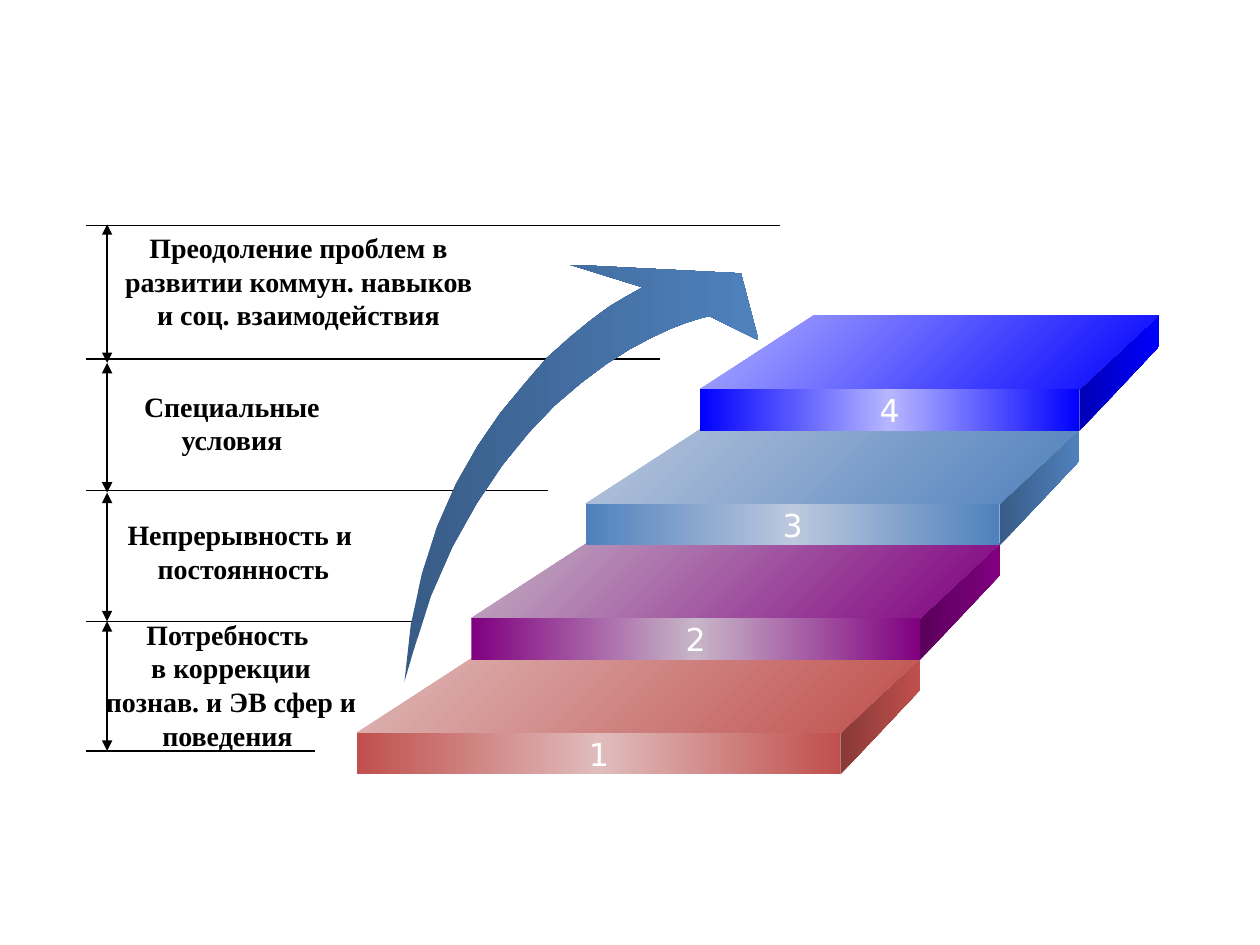
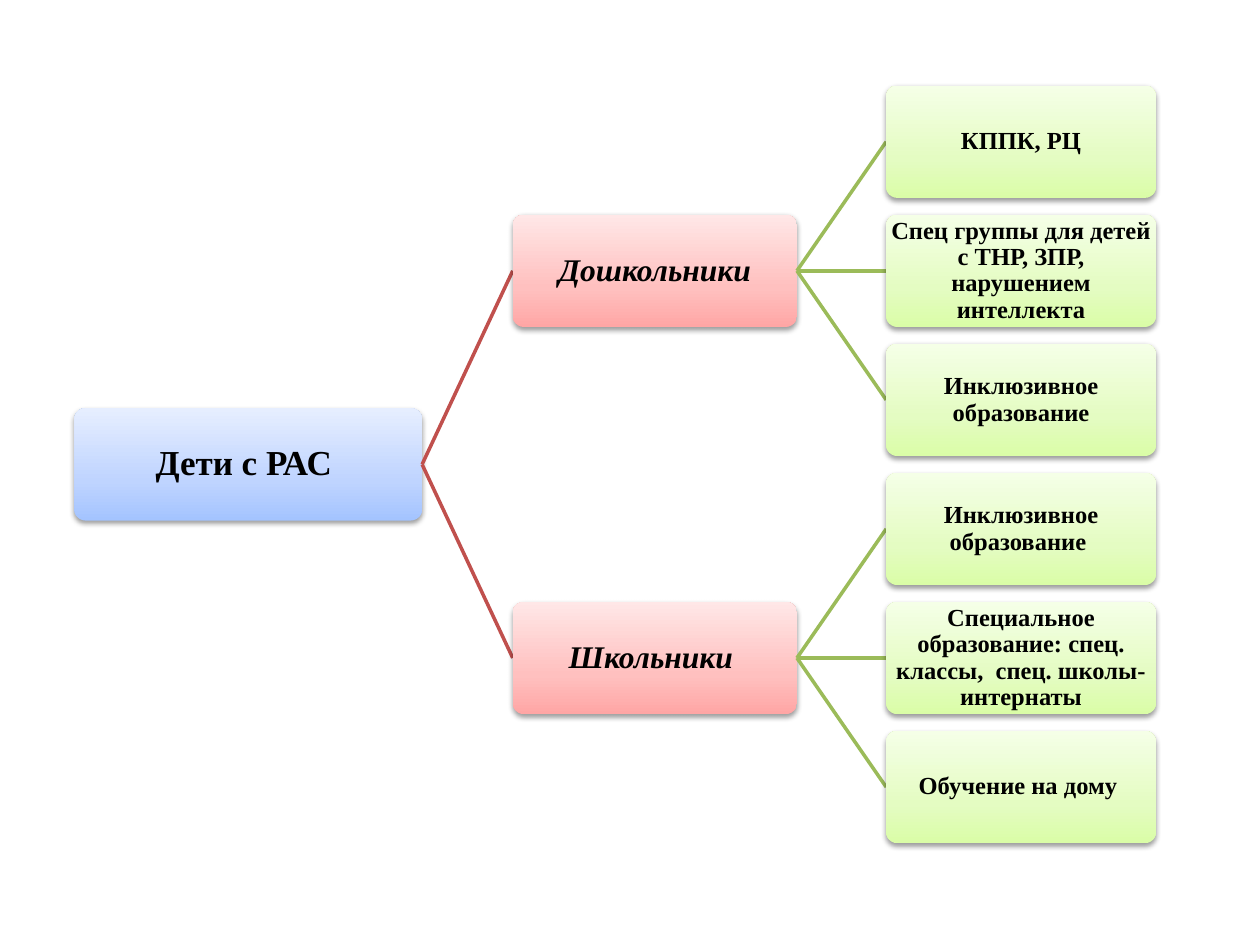
"""Builds two slides: the staircase of support and the tree of education paths."""
from copy import deepcopy
from dataclasses import dataclass
from typing import NamedTuple

from lxml import etree
from pptx import Presentation
from pptx import util as u
from pptx.dml import color as dml_color
from pptx.enum import shapes, text
from pptx.oxml import ns

SERIF, SANS = "Times New Roman", "DejaVu Sans"
BLACK, WHITE, RED, BLUE, GREEN = "000000", "FFFFFF", "C0504D", "4F81BD", "9BBB59"


class Point(NamedTuple):
    x: float
    y: float


class Box(NamedTuple):
    left: float
    top: float
    width: float
    height: float


class Stop(NamedTuple):
    position: float
    hex_color: str
    tone: str = ""
    amount: int = 0


@dataclass
class Level:
    lines: list[str]
    caption: Box
    wrap: bool
    rule_y: float
    rule_end: float
    arrow_top: float


@dataclass
class Tier:
    left: float
    width: float
    size: float
    italic: bool
    stops: list[Stop]


@dataclass
class Branch:
    label: str
    row: int
    paths: list[str]


FLOOR_Y, FLOOR_END = 429.1, 180
LEVELS = [
    Level(["Преодоление проблем в развитии коммун. навыков и соц. взаимодействия"],
          Box(62.6, 128.2, 216, 65.5), True, 128.9, 445.7, 128.2),
    Level(["Специальные", " условия "], Box(74.2, 218.9, 116.6, 46), False, 205.2, 377.3, 207.4),
    Level(["Непрерывность и", " постоянность"],
          Box(62.6, 292.3, 149, 46), False, 280.1, 313.2, 281.5),
    Level(["Потребность", " в коррекции", " познав. и ЭВ сфер и поведения"],
          Box(31, 349.2, 198, 85), True, 355, 241.2, 355),
]
STEP_COLORS = [RED, "800080", BLUE, "0000FF"]
RISE_ARROW = [
    (231.1, 389.5), (234.7, 357.1), (241.2, 327.6), (249.8, 301), (260.6, 276.5),
    (272.9, 254.9), (285.8, 236.2), (299.5, 219.6), (312.5, 204.5), (325.4, 193),
    (337.7, 182.9), (348.5, 175), (357.1, 169.9), (367.2, 164.2), (325.4, 151.2),
    (423.4, 156.2), (433.4, 194.4), (405.4, 180.7), (401.8, 181.4), (392.4, 184.3),
    (383, 187.9), (372.2, 193), (360, 199.4), (346.3, 208.1), (331.9, 218.9),
    (316.8, 231.8), (301.7, 247.7), (286.6, 266.4), (272.2, 288), (258.5, 312.5),
    (246.2, 340.6), (236.2, 372.2),
]

ROW_TOP, ROW_STEP, CARD_HEIGHT = 48.9, 73.75, 64.2
ROOT = Tier(42.5, 198.7, 20, False,
            [Stop(0, "A4C4FF"), Stop(0.35, "BFD4FF"), Stop(1, "E6EEFF")])
AGE = Tier(293, 162.4, 18, True,
           [Stop(0, "FFA6A5"), Stop(0.35, "FFC0BF"), Stop(1, "FFE7E7")])
PATH = Tier(506.4, 154.2, 14, False,
            [Stop(0, "DAFDA7"), Stop(0.35, "E4FCC2"), Stop(1, "F5FFE7")])
BRANCHES = [
    Branch("Дошкольники", 1, ["КППК, РЦ",
                              "Спец группы для детей с ТНР, ЗПР, нарушением интеллекта",
                              "Инклюзивное образование"]),
    Branch("Школьники ", 4, ["Инклюзивное образование ",
                             "Специальное образование: спец. классы,  спец. школы-интернаты",
                             "Обучение на дому "]),
]


def set_color(target, hex_color: str) -> None:
    target.rgb = dml_color.RGBColor.from_string(hex_color)


def add_child(parent, tag: str, **attributes):
    return etree.SubElement(parent, ns.qn(tag), {k: str(v) for k, v in attributes.items()})


def fill_gradient(shape, stops: list[Stop], angle: float) -> None:
    shape.shadow.inherit = False
    shape.line.fill.background()
    shape.fill.gradient()
    shape.fill.gradient_angle = angle
    stop_list = shape._element.spPr.find(ns.qn("a:gradFill")).find(ns.qn("a:gsLst"))
    while len(stop_list) < len(stops):
        stop_list.append(deepcopy(stop_list[0]))
    for drawn, stop, node in zip(shape.fill.gradient_stops, stops, stop_list):
        drawn.position = stop.position
        set_color(drawn.color, stop.hex_color)
        if stop.tone:
            add_child(node[0], f"a:{stop.tone}", val=stop.amount)


def write(shape, lines: list[str], size: float, font_name: str, hex_color: str,
          bold: bool = False, italic: bool = False, spacing: float | None = None) -> None:
    frame = shape.text_frame
    frame.text = "\n".join(lines)
    for paragraph in frame.paragraphs:
        paragraph.alignment = text.PP_ALIGN.CENTER
        paragraph.line_spacing = spacing
        font = paragraph.font
        font.size, font.name, font.bold, font.italic = u.Pt(size), font_name, bold, italic
        set_color(font.color, hex_color)


def add_line(slide, start: Point, end: Point, hex_color: str, width: float,
             arrows: bool = False) -> None:
    line = slide.shapes.add_connector(shapes.MSO_CONNECTOR.STRAIGHT,
                                      *(u.Pt(value) for value in (*start, *end)))
    set_color(line.line.color, hex_color)
    line.line.width = u.Pt(width)
    if arrows:
        outline = line.line._get_or_add_ln()
        add_child(outline, "a:headEnd", type="triangle")
        add_child(outline, "a:tailEnd", type="triangle")
    add_child(line._element.spPr, "a:effectLst")


def add_outline(slide, points: list[tuple[float, float]], stops: list[Stop],
                angle: float) -> None:
    start, *rest = [(u.Pt(x), u.Pt(y)) for x, y in points]
    builder = slide.shapes.build_freeform(*start)
    builder.add_line_segments(rest, close=True)
    fill_gradient(builder.convert_to_shape(), stops, angle)


def add_preset(slide, preset, box: Box):
    return slide.shapes.add_shape(preset, *(u.Pt(value) for value in box))


def shaded(hex_color: str) -> list[Stop]:
    return [Stop(0, hex_color, "shade", 46275), Stop(1, hex_color)]


def add_step(slide, index: int, hex_color: str) -> None:
    left, right, top = 204 + 65.3 * index, 480.3 + 45.5 * index, 418.7 - 65.4 * index
    back_right, back_top, height = right + 45.4, top - 42.5, 23.8
    add_outline(slide, [(back_right, back_top + 18), (right, top + height), (right, top),
                        (back_right, back_top)], shaded(hex_color), 0)
    add_outline(slide, [(right, top), (left, top), (left + 65.5, back_top),
                        (back_right, back_top)],
                [Stop(0, hex_color, "tint", 56471), Stop(1, hex_color)], 315)
    front = add_preset(slide, shapes.MSO_SHAPE.RECTANGLE, Box(left, top, right - left, height))
    fill_gradient(front, [Stop(0, hex_color), Stop(0.5, hex_color, "tint", 53725),
                          Stop(1, hex_color)], 0)
    front.text_frame.word_wrap = False
    front.text_frame.vertical_anchor = text.MSO_ANCHOR.MIDDLE
    write(front, [str(index + 1)], 18, SANS, WHITE)


def add_level(slide, level: Level, arrow_bottom: float) -> None:
    add_line(slide, Point(level.rule_end, level.rule_y), Point(49, level.rule_y), BLACK, 0.75)
    add_line(slide, Point(61.2, level.arrow_top), Point(61.2, arrow_bottom), BLACK, 0.75, True)
    caption = slide.shapes.add_textbox(*(u.Pt(value) for value in level.caption))
    caption.text_frame.word_wrap = level.wrap
    write(caption, level.lines, 16, SERIF, BLACK, bold=True)


def build_staircase(slide) -> None:
    add_line(slide, Point(FLOOR_END, FLOOR_Y), Point(49, FLOOR_Y), BLACK, 0.75)
    arrow_bottoms = [level.arrow_top for level in LEVELS[1:]] + [FLOOR_Y]
    for level, arrow_bottom in zip(LEVELS, arrow_bottoms):
        add_level(slide, level, arrow_bottom)
    add_outline(slide, RISE_ARROW, shaded(BLUE), 0)
    for index, hex_color in enumerate(STEP_COLORS):
        add_step(slide, index, hex_color)


def add_card(slide, tier: Tier, row: float, label: str) -> None:
    card = add_preset(slide, shapes.MSO_SHAPE.ROUNDED_RECTANGLE,
                      Box(tier.left, ROW_TOP + ROW_STEP * row, tier.width, CARD_HEIGHT))
    card.adjustments[0] = 0.1
    fill_gradient(card, tier.stops, 90)
    effects = card._element.spPr.find(ns.qn("a:effectLst"))
    shadow = add_child(effects, "a:outerShdw", blurRad=u.Pt(3.1), dist=u.Pt(1.6),
                       dir=5400000, rotWithShape=0)
    add_child(add_child(shadow, "a:srgbClr", val=BLACK), "a:alpha", val=38000)
    frame = card.text_frame
    frame.word_wrap = True
    frame.vertical_anchor = text.MSO_ANCHOR.MIDDLE
    frame.margin_left = frame.margin_right = frame.margin_top = frame.margin_bottom = 0
    write(card, [label], tier.size, SERIF, BLACK, bold=True, italic=tier.italic, spacing=0.9)


def link(slide, parent: Tier, parent_row: float, child: Tier, child_row: float,
         hex_color: str) -> None:
    middle = ROW_TOP + CARD_HEIGHT / 2
    add_line(slide, Point(parent.left + parent.width, middle + ROW_STEP * parent_row),
             Point(child.left, middle + ROW_STEP * child_row), hex_color, 2)


def build_tree(slide) -> None:
    root_row = 2.5
    add_card(slide, ROOT, root_row, "Дети с РАС ")
    for branch in BRANCHES:
        link(slide, ROOT, root_row, AGE, branch.row, RED)
        add_card(slide, AGE, branch.row, branch.label)
        for row, label in enumerate(branch.paths, branch.row - 1):
            link(slide, AGE, branch.row, PATH, row, GREEN)
            add_card(slide, PATH, row, label)


def main() -> None:
    deck = Presentation()
    deck.slide_width, deck.slide_height = u.Pt(720), u.Pt(540)
    for build in (build_staircase, build_tree):
        build(deck.slides.add_slide(deck.slide_layouts[6]))
    deck.save("out.pptx")


if __name__ == "__main__":
    main()
